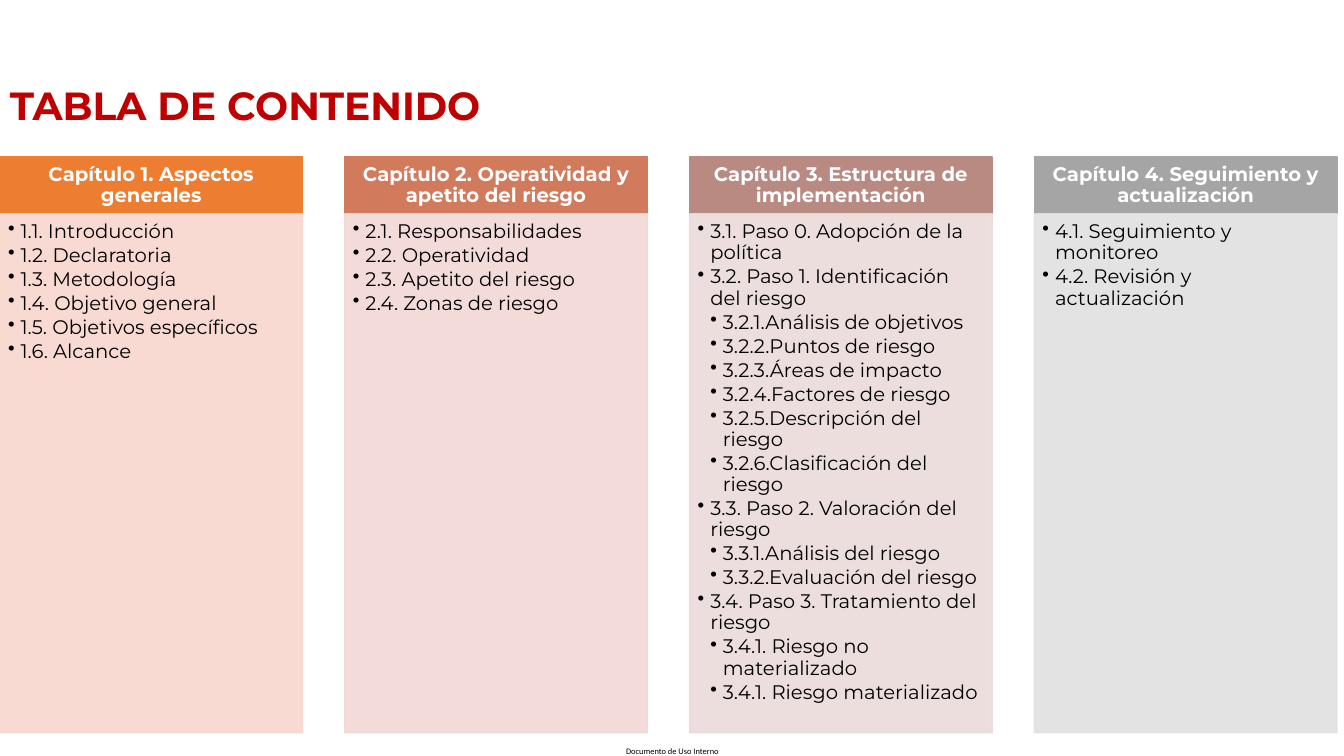
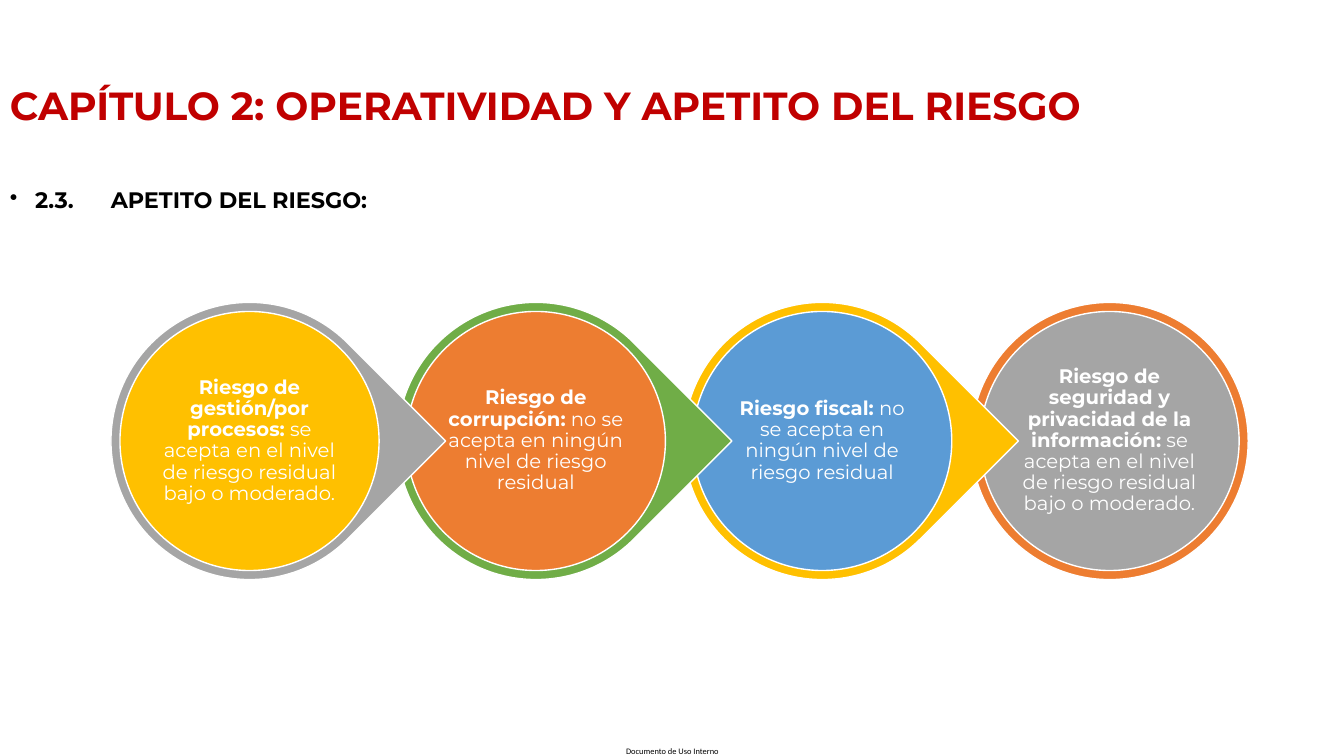
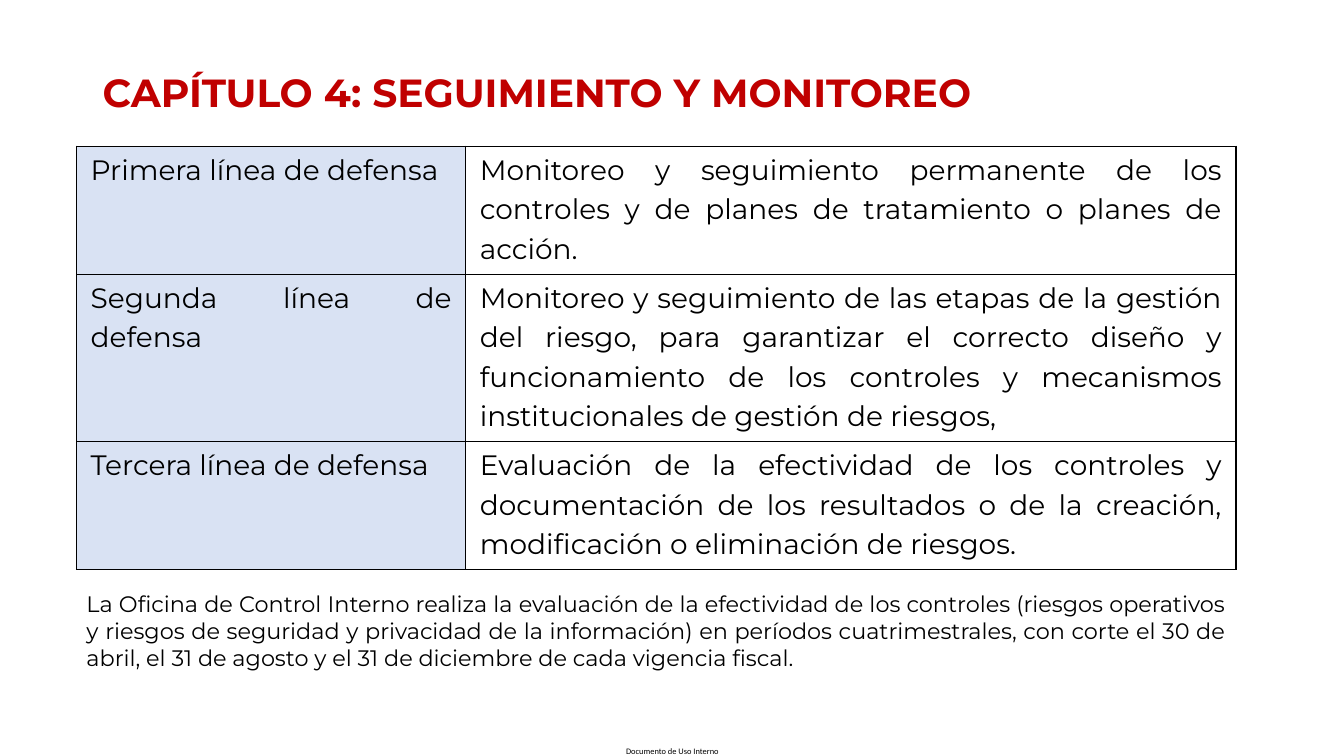
"""Build three slides on risk policy: contents, risk appetite and lines of defence."""
import pptx
import pptx.util
import pptx.dml.color
import pptx.enum.shapes
import pptx.enum.text
import pptx.oxml
import pptx.oxml.ns

PX = 9144
KIND = pptx.enum.shapes.MSO_SHAPE
ALIGN = pptx.enum.text.PP_ALIGN
MID = pptx.enum.text.MSO_ANCHOR.MIDDLE
FIT = pptx.enum.text.MSO_AUTO_SIZE.SHAPE_TO_FIT_TEXT

THEME = {
    "font": "Montserrat", "small": "Calibri",
    "red": "C00000", "black": "000000", "white": "FFFFFF", "pale": "D9E2F3",
    "orange": "ED7D31", "gray": "A5A5A5", "gold": "FFC000",
    "green": "70AD47", "blue": "5B9BD5",
    "title": 28, "table": 20, "note": 16, "body": 14, "foot": 6,
}

FOOT = "Documento de Uso Interno"

CHAPTERS = [
    ("Capítulo 1. Aspectos generales", "ED7D31", "F8D7CE", [
        (1, "1.1. Introducción"), (1, "1.2. Declaratoria"),
        (1, "1.3. Metodología"), (1, "1.4. Objetivo general"),
        (1, "1.5. Objetivos específicos"), (1, "1.6. Alcance")]),
    ("Capítulo 2. Operatividad y apetito del riesgo", "D17B5C", "F1D8D4", [
        (1, "2.1. Responsabilidades"), (1, "2.2. Operatividad"),
        (1, "2.3. Apetito del riesgo"), (1, "2.4. Zonas de riesgo")]),
    ("Capítulo 3. Estructura de implementación", "B98A82", "E9DBDA", [
        (1, "3.1. Paso 0. Adopción de la política"),
        (1, "3.2. Paso 1. Identificación del riesgo"),
        (2, "3.2.1.Análisis de objetivos"), (2, "3.2.2.Puntos de riesgo"),
        (2, "3.2.3.Áreas de impacto"), (2, "3.2.4.Factores de riesgo"),
        (2, "3.2.5.Descripción del riesgo"),
        (2, "3.2.6.Clasificación del riesgo"),
        (1, "3.3. Paso 2. Valoración del riesgo"),
        (2, "3.3.1.Análisis del riesgo"), (2, "3.3.2.Evaluación del riesgo"),
        (1, "3.4. Paso 3. Tratamiento del riesgo"),
        (2, "3.4.1. Riesgo no materializado"),
        (2, "3.4.1. Riesgo materializado")]),
    ("Capítulo 4. Seguimiento y actualización", "A5A5A5", "E1E1E1", [
        (1, "4.1. Seguimiento y monitoreo"),
        (1, "4.2. Revisión y actualización")]),
]

RISKS = [
    ("Riesgo de gestión/por procesos:",
     " se acepta en el nivel de riesgo residual bajo o moderado.",
     "gray", "gold"),
    ("Riesgo de corrupción:",
     " no se acepta en ningún nivel de riesgo residual", "green", "orange"),
    ("Riesgo fiscal:",
     " no se acepta en ningún nivel de riesgo residual", "gold", "blue"),
    ("Riesgo de seguridad y privacidad de la información:",
     " se acepta en el nivel de riesgo residual bajo o moderado.",
     "orange", "gray"),
]

LINES = [
    (127, "Primera línea de defensa",
     "Monitoreo y seguimiento permanente de los controles y de planes de "
     "tratamiento o planes de acción."),
    (166, "Segunda línea de defensa",
     "Monitoreo y seguimiento de las etapas de la gestión del riesgo, para "
     "garantizar el correcto diseño y funcionamiento de los controles y "
     "mecanismos institucionales de gestión de riesgos,"),
    (127, "Tercera línea de defensa",
     "Evaluación de la efectividad de los controles y documentación de los "
     "resultados o de la creación, modificación o eliminación de riesgos."),
]

NOTE = ("La Oficina de Control Interno realiza la evaluación de la efectividad "
        "de los controles (riesgos operativos y riesgos de seguridad y "
        "privacidad de la información) en períodos cuatrimestrales, con corte "
        "el 30 de abril, el 31 de agosto y el 31 de diciembre de cada vigencia "
        "fiscal.")


def px(*vals):
    return [pptx.util.Emu(round(v * PX)) for v in vals]


def tint(name):
    return pptx.dml.color.RGBColor.from_string(THEME.get(name, name))


def apply(item, vals):
    for key, val in vals.items():
        setattr(item, key, val)


def inset(item, edges):
    sides = ("margin_left", "margin_top", "margin_right", "margin_bottom")
    apply(item, dict(zip(sides, px(*edges))))


def node(owner, tag, **vals):
    part = pptx.oxml.ns.qn(tag)
    child = owner.makeelement(part, {k: str(v) for k, v in vals.items()})
    owner.append(child)
    return child


def write(par, runs, size, color="black", font="font", bullet=None, **form):
    """Fill a paragraph with (text, bold) runs; bullet is (left, hang)."""
    if bullet:
        left, hang = px(*bullet)
        props = par._p.get_or_add_pPr()
        props.set("marL", str(left))
        props.set("indent", str(-hang))
        node(props, "a:buChar", char="•")
    apply(par, form)
    for text, bold in runs:
        run = par.add_run()
        run.text = text
        apply(run.font, {"name": THEME[font], "size": pptx.util.Pt(THEME[size]),
                         "bold": bold})
        run.font.color.rgb = tint(color)


def label(slide, box, runs, size, edges=(10, 5, 10, 5), frame=None, **form):
    area = slide.shapes.add_textbox(*px(*box)).text_frame
    apply(area, {"word_wrap": True, **(frame or {})})
    inset(area, edges)
    write(area.paragraphs[0], runs, size, **form)


def shape(slide, kind, box, fill, line, alpha=None):
    item = slide.shapes.add_shape(kind, *px(*box))
    item.shadow.inherit = False
    item.fill.solid()
    item.fill.fore_color.rgb = tint(fill)
    item.line.color.rgb = tint(line)
    item.line.width = pptx.util.Pt(1)
    if alpha:
        for color in list(item.element.spPr.iter(pptx.oxml.ns.qn("a:srgbClr"))):
            node(color, "a:alpha", val=alpha * 1000)
    item.text_frame.word_wrap = True
    return item


def start(deck, title, left=0, top=71, height=72):
    slide = deck.slides.add_slide(deck.slide_layouts[6])
    label(slide, (621, 740, 94, 10), [(FOOT, False)], "foot", (0, 0, 0, 0),
          {"word_wrap": False, "auto_size": FIT}, font="small")
    label(slide, (left, top, 1150, height), [(title, True)], "title",
          frame={"vertical_anchor": MID}, color="red", line_spacing=0.9)
    return slide


def contents(deck):
    slide = start(deck, "TABLA DE CONTENIDO")
    for col, (name, dark, light, items) in enumerate(CHAPTERS):
        left = col * 342
        head = shape(slide, KIND.RECTANGLE, (left, 156, 300, 56), dark, dark)
        area = head.text_frame
        area.vertical_anchor = MID
        inset(area, (11, 6, 11, 6))
        write(area.paragraphs[0], [(name, True)], "body", "white",
              alignment=ALIGN.CENTER, line_spacing=0.9,
              space_after=pptx.util.Pt(5))
        body = shape(slide, KIND.RECTANGLE, (left, 212, 300, 515), light, light, 90)
        area = body.text_frame
        area.vertical_anchor = pptx.enum.text.MSO_ANCHOR.TOP
        inset(area, (8, 8, 11, 12))
        for row, (level, text) in enumerate(items):
            par = area.add_paragraph() if row else area.paragraphs[0]
            write(par, [(text, False)], "body", bullet=(12.5 * level, 12.5),
                  alignment=ALIGN.LEFT, line_spacing=0.9,
                  space_after=pptx.util.Pt(2))


def appetite(deck):
    slide = start(deck, "CAPÍTULO 2: OPERATIVIDAD Y APETITO DEL RIESGO")
    label(slide, (0, 183, 1308, 39), [("2.3.\tAPETITO DEL RIESGO:", True)],
          "note", bullet=(25, 25), line_spacing=0.9)
    last = len(RISKS) - 1
    for step in range(last, -1, -1):
        name, rule, ring, core = RISKS[step]
        left = 110 + step * 853 // 3
        kind = KIND.OVAL if step == last else KIND.TEAR
        drop = shape(slide, kind, (left, 300, 275, 275), ring, "white")
        if step < last:
            drop.rotation = 45
        disc = shape(slide, KIND.OVAL, (left + 9, 309, 257, 257), core, "white")
        area = disc.text_frame
        area.vertical_anchor = MID
        inset(area, (2, 2, 2, 2))
        write(area.paragraphs[0], [(name, True), (rule, False)], "body", "white",
              alignment=ALIGN.CENTER, line_spacing=0.9,
              space_after=pptx.util.Pt(5))


def border(cell):
    props = cell._tc.get_or_add_tcPr()
    for side in ("a:lnL", "a:lnR", "a:lnT", "a:lnB"):
        edge = node(props, side, w=12700)
        node(node(edge, "a:solidFill"), "a:srgbClr", val=THEME["black"])


def defence(deck):
    slide = start(deck, "CAPÍTULO 4: SEGUIMIENTO Y MONITOREO", 92, 61, 67)
    high = sum(line[0] for line in LINES)
    grid = slide.shapes.add_table(len(LINES), 2, *px(76, 145, 1150, high)).table
    apply(grid, {"first_row": False, "horz_banding": False})
    for col, width in zip(grid.columns, px(386, 764)):
        col.width = width
    for row, (height, *texts) in zip(grid.rows, LINES):
        row.height = px(height)[0]
        for col, (cell, text) in enumerate(zip(row.cells, texts)):
            border(cell)
            if col:
                cell.fill.background()
            else:
                cell.fill.solid()
                cell.fill.fore_color.rgb = tint("pale")
            inset(cell, (14, 2, 14, 0))
            write(cell.text_frame.paragraphs[0], [(text, False)], "table",
                  alignment=ALIGN.JUSTIFY, line_spacing=1.15,
                  space_after=pptx.util.Pt(8))
    label(slide, (76, 581, 1150, 91), [(NOTE, False)], "note",
          frame={"auto_size": FIT}, alignment=ALIGN.JUSTIFY)


def main():
    deck = pptx.Presentation()
    deck.slide_width, deck.slide_height = px(1333, 750)
    for build in (contents, appetite, defence):
        build(deck)
    deck.save("out.pptx")


if __name__ == "__main__":
    main()
